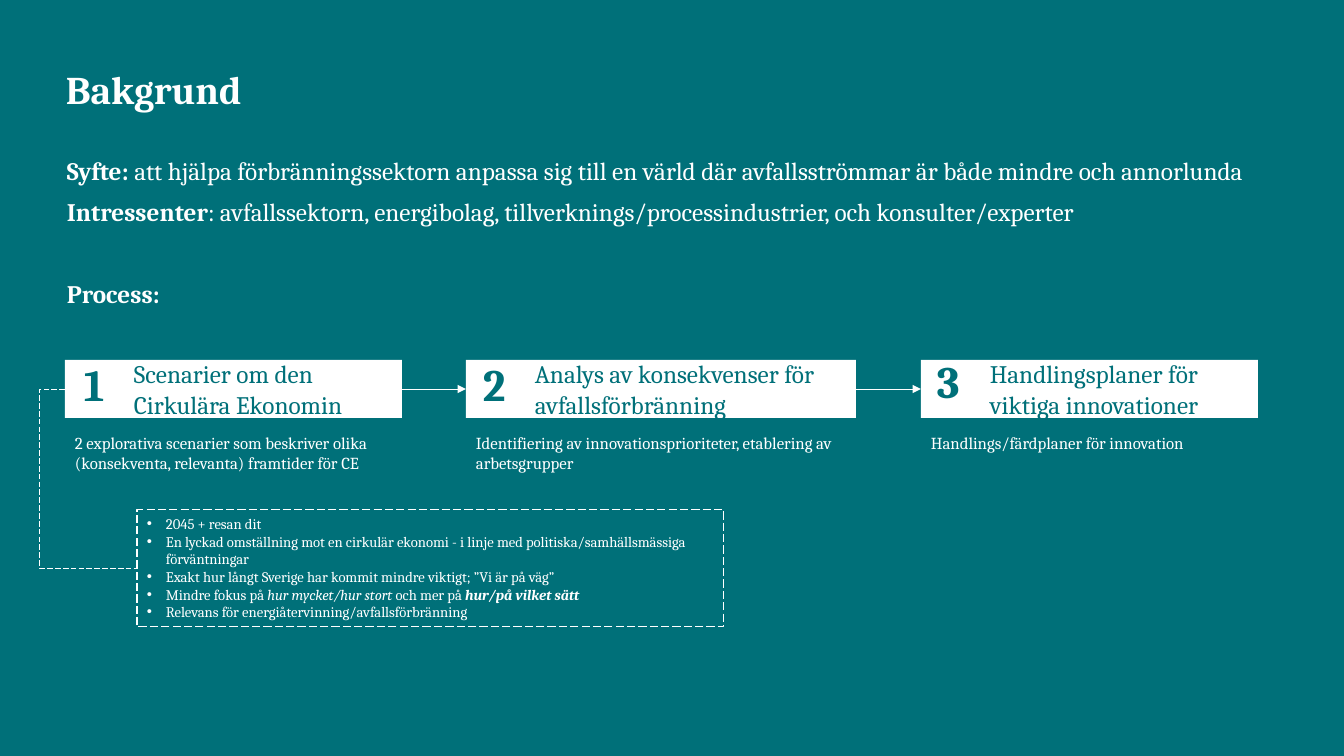
from lxml.etree import SubElement
from pptx import Presentation
from pptx.dml.color import RGBColor
from pptx.enum.dml import MSO_LINE
from pptx.enum.shapes import MSO_CONNECTOR, MSO_SHAPE
from pptx.enum.text import MSO_ANCHOR, PP_ALIGN
from pptx.oxml.ns import qn
from pptx.util import Emu, Pt

TEAL, WHITE = "007079", "FFFFFF"
FONT = "Cambria"
SLIDE_WIDTH, SLIDE_HEIGHT = 1344, 756

PURPOSE = [
    [("Syfte: ", "b"), ("att hjälpa förbränningssektorn anpassa sig till en värld där "
                        "avfallsströmmar är både mindre och annorlunda", "")],
    [("Intressenter", "b"), (": avfallssektorn, energibolag, tillverknings/processindustrier, "
                             "och konsulter/experter", "")],
    [("Process:", "b")],
]
# left, width, number offset (x, y), heading, note
STEPS = [
    (65, 337, (9, -8), "Scenarier om den Cirkulära Ekonomin",
     "2 explorativa scenarier som beskriver olika (konsekventa, relevanta) framtider för CE"),
    (466, 390, (7, -8), "Analys av konsekvenser för avfallsförbränning",
     "Identifiering av innovationsprioriteter, etablering av arbetsgrupper"),
    (921, 337, (6, -11), "Handlingsplaner för viktiga innovationer",
     "Handlings/färdplaner för innovation"),
]
STEP_TOP, STEP_HEIGHT = 360, 58
ASSUMPTIONS = [
    "2045 + resan dit",
    "En lyckad omställning mot en cirkulär ekonomi - i linje med "
    "politiska/samhällsmässiga förväntningar",
    "Exakt hur långt Sverige har kommit mindre viktigt; ”Vi är på väg”",
    [("Mindre fokus på ", ""), ("hur mycket/hur stort", "i"),
     (" och mer på ", ""), ("hur/på vilket sätt", "bi")],
    "Relevans för energiåtervinning/avfallsförbränning",
]


def px(length):
    return Emu(round(length * 12192000 / SLIDE_WIDTH))


def color(value):
    return RGBColor.from_string(value)


def write(shape, paragraphs, size, fill=WHITE, style="", anchor=MSO_ANCHOR.TOP,
          line_spacing=None, space_before=(), indent=0, bullet=False):
    """Fill a shape with paragraphs, each a string or a list of (text, style) runs."""
    frame = shape.text_frame
    frame.word_wrap = True
    frame.vertical_anchor = anchor
    for index, content in enumerate(paragraphs):
        paragraph = frame.paragraphs[0] if index == 0 else frame.add_paragraph()
        properties = paragraph._p.get_or_add_pPr()
        if indent:
            properties.set("marL", str(px(indent)))
        if bullet:
            properties.set("indent", str(-px(indent)))
            SubElement(properties, qn("a:buFont"), typeface="Arial")
            SubElement(properties, qn("a:buChar"), char="•")
        paragraph.alignment = PP_ALIGN.LEFT
        if line_spacing:
            paragraph.line_spacing = line_spacing
        if index and space_before:
            paragraph.space_before = Pt(space_before[index])
        runs = [(content, style)] if isinstance(content, str) else content
        for text, run_style in runs:
            run = paragraph.add_run()
            run.text = text
            run.font.name = FONT
            run.font.size = Pt(size)
            run.font.bold = "b" in run_style
            run.font.italic = "i" in run_style
            run.font.color.rgb = color(fill)


def add_text(slide, box, paragraphs, size, **text_format):
    shape = slide.shapes.add_textbox(*map(px, box))
    write(shape, paragraphs, size, **text_format)


def add_rectangle(slide, box):
    shape = slide.shapes.add_shape(MSO_SHAPE.RECTANGLE, *map(px, box))
    shape.shadow.inherit = False
    return shape


def join(slide, kind, begin, begin_site, end, end_site):
    """Join two shapes with a thin white connector."""
    connector = slide.shapes.add_connector(kind, 0, 0, 0, 0)
    connector.begin_connect(begin, begin_site)
    connector.end_connect(end, end_site)
    connector.line.color.rgb = color(WHITE)
    connector.line.width = Pt(0.5)
    SubElement(connector._element.spPr, qn("a:effectLst"))
    return connector


def add_introduction(slide, left, top, width):
    add_text(slide, (left, top, 773, 71), ["Bakgrund"], 28, style="b",
             anchor=MSO_ANCHOR.MIDDLE, line_spacing=0.9)
    add_text(slide, (left + 1, top + 98, width, 470), PURPOSE, 18,
             line_spacing=0.9, space_before=(0, 10, 39))


def add_step(slide, box, number, number_offset, heading, note):
    left, top, width, height = box
    step = add_rectangle(slide, box)
    step.fill.solid()
    step.fill.fore_color.rgb = color(WHITE)
    step.line.fill.background()
    write(step, [heading], 18, fill=TEAL, anchor=MSO_ANCHOR.MIDDLE, indent=59)
    add_text(slide, (left, top + 68, width, 50), [note], 12)
    across, down = number_offset
    add_text(slide, (left + across, top + down, 54, 64), [str(number)], 32,
             fill=TEAL, style="b")
    return step


def add_process(slide, top, height):
    steps = [add_step(slide, (left, top, width, height), number, offset, heading, note)
             for number, (left, width, offset, heading, note) in enumerate(STEPS, 1)]
    for begin, end in zip(steps, steps[1:]):
        arrow = join(slide, MSO_CONNECTOR.STRAIGHT, begin, 3, end, 1)
        SubElement(arrow.line._get_or_add_ln(), qn("a:tailEnd"), type="triangle")
    return steps


def add_assumptions(slide, box, step):
    """Dashed list of assumptions, tied to the left side of its step."""
    shape = add_rectangle(slide, box)
    shape.fill.background()
    shape.line.color.rgb = color(WHITE)
    shape.line.width = Pt(0.75)
    shape.line.dash_style = MSO_LINE.LONG_DASH
    write(shape, ASSUMPTIONS, 10.5, indent=19, bullet=True)
    bracket = join(slide, MSO_CONNECTOR.ELBOW, step, 1, shape, 1)
    bracket.line.dash_style = MSO_LINE.LONG_DASH
    adjustments = bracket._element.find(".//" + qn("a:avLst"))
    SubElement(adjustments, qn("a:gd"), name="adj1", fmla="val -35100")


def main():
    presentation = Presentation()
    presentation.slide_width = px(SLIDE_WIDTH)
    presentation.slide_height = px(SLIDE_HEIGHT)
    slide = presentation.slides.add_slide(presentation.slide_layouts[6])
    slide.background.fill.solid()
    slide.background.fill.fore_color.rgb = color(TEAL)
    add_introduction(slide, 56, 56, 1224)
    steps = add_process(slide, STEP_TOP, STEP_HEIGHT)
    add_assumptions(slide, (137, 510, 587, 117), steps[0])
    presentation.save("out.pptx")


if __name__ == "__main__":
    main()
